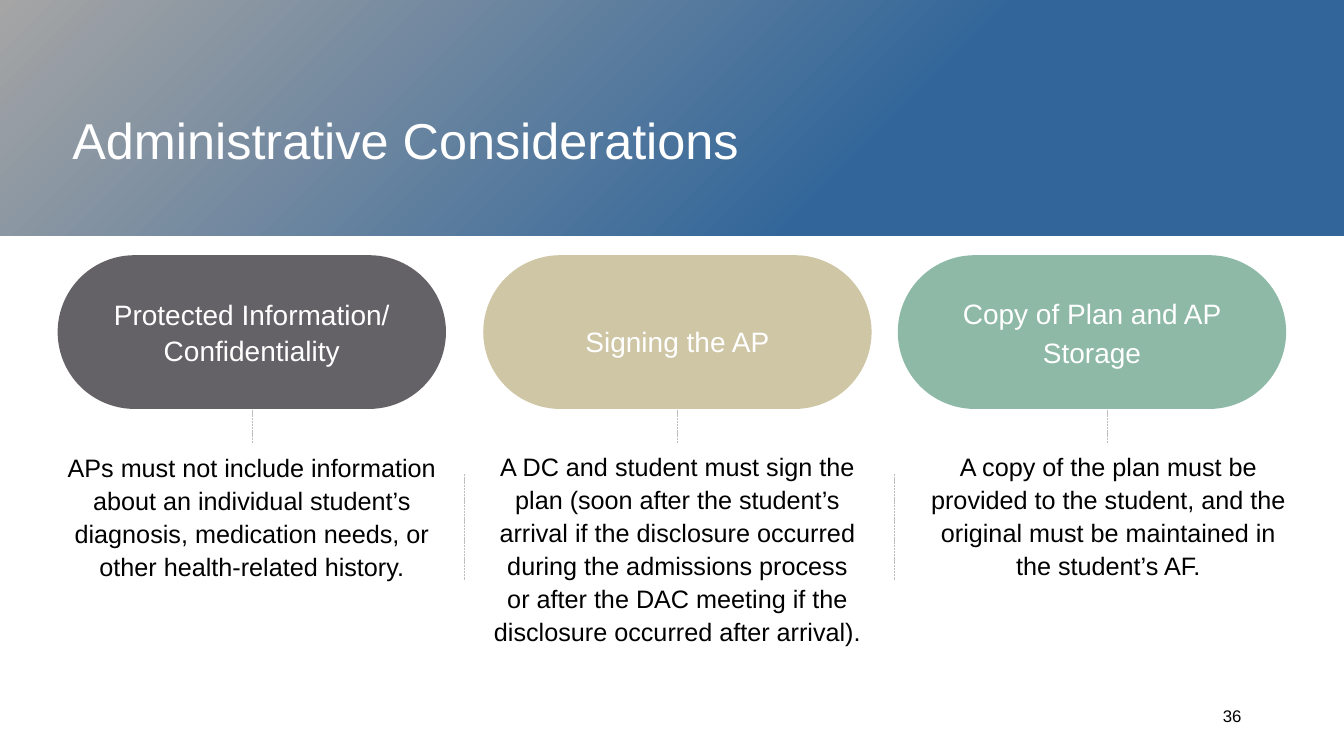
from lxml import etree
from pptx import Presentation
from pptx.dml.color import RGBColor
from pptx.enum.dml import MSO_LINE
from pptx.enum.shapes import MSO_CONNECTOR, MSO_SHAPE
from pptx.enum.text import MSO_AUTO_SIZE, PP_ALIGN
from pptx.oxml.ns import qn
from pptx.util import Pt


def paint(color, value):
    color.rgb = RGBColor.from_string(value)


def write(words, left, top, width, height, size, ink, layout, grow=True):
    frame = slide.shapes.add_textbox(Pt(left), Pt(top), Pt(width), Pt(height)).text_frame
    frame.word_wrap = True
    frame.auto_size = MSO_AUTO_SIZE.SHAPE_TO_FIT_TEXT if grow else MSO_AUTO_SIZE.NONE
    paragraph = frame.paragraphs[0]
    for name, value in layout.items():
        setattr(paragraph, name, value)
    run = paragraph.add_run()
    run.text = words
    for name, value in {"name": "Arial", "size": Pt(size)}.items():
        setattr(run.font, name, value)
    paint(run.font.color, ink)


deck = Presentation()
deck.slide_width, deck.slide_height = Pt(960), Pt(540)
slide = deck.slides.add_slide(deck.slide_layouts[6])

stems = [(x, 262, 317) for x in (180, 483.8, 791.3)]
dividers = [(x, 338.4, 414) for x in (332, 638.7)]
for x, top, bottom in stems + dividers:
    rule = slide.shapes.add_connector(MSO_CONNECTOR.STRAIGHT, Pt(x), Pt(top), Pt(x), Pt(bottom))
    paint(rule.line.color, "BFBFBF")
    for name, value in {"width": Pt(0.5), "dash_style": MSO_LINE.SQUARE_DOT}.items():
        setattr(rule.line, name, value)
    etree.SubElement(rule._element.spPr, qn("a:effectLst"))

banner = slide.shapes.add_shape(MSO_SHAPE.RECTANGLE, 0, 0, Pt(960), Pt(168.6))
banner.shadow.inherit = False
banner.line.fill.background()
banner.fill.gradient()
banner.fill.gradient_angle = 135
for stop, (position, shade) in zip(banner.fill.gradient_stops, [(0.35, "32669A"), (1, "A5A5A5")]):
    stop.position = position
    paint(stop.color, shade)
write("Administrative Considerations", 44.6, 74.2, 915, 51, 36, "FFFFFF", {})

column_width = 277.4
heading_inset = 22.8
topics = [
    ("Protected Information/ Confidentiality", 41.2, "646267", 206.6, 58.3, 1.09, 6,
     "APs must not include information about an individual student’s diagnosis, "
     "medication needs, or other health-related history.", 41.2, 317.5, 101),
    ("Signing the AP", 345.2, "CFC6A5", 216, 39, 1.5, 0,
     "A DC and student must sign the plan (soon after the student’s arrival if the "
     "disclosure occurred during the admissions process or after the DAC meeting if "
     "the disclosure occurred after arrival).", 345.2, 316.8, 148.3),
    ("Copy of Plan and AP Storage", 641.3, "8DB9A6", 205.2, 60.5, 1.14, 6,
     "A copy of the plan must be provided to the student, and the original must be "
     "maintained in the student’s AF.", 653, 316.8, 101),
]
for (heading, left, shade, heading_top, heading_height, spacing, before,
     detail, detail_left, detail_top, detail_height) in topics:
    pill = slide.shapes.add_shape(MSO_SHAPE.ROUNDED_RECTANGLE, Pt(left), Pt(182.3),
                                  Pt(column_width), Pt(109.8))
    pill.adjustments[0] = 0.5
    pill.shadow.inherit = False
    pill.line.fill.background()
    pill.fill.solid()
    paint(pill.fill.fore_color, shade)
    write(heading, left + heading_inset, heading_top, column_width - 2 * heading_inset,
          heading_height, 20, "FFFFFF",
          {"alignment": PP_ALIGN.CENTER, "line_spacing": spacing, "space_before": Pt(before)})
    write(detail, detail_left, detail_top, column_width, detail_height, 18, "000000",
          {"alignment": PP_ALIGN.CENTER, "line_spacing": 1.09, "space_before": Pt(6)})

write("36", 678, 500.4, 216, 28.8, 12, "000000", {"alignment": PP_ALIGN.RIGHT}, grow=False)

deck.save("out.pptx")
